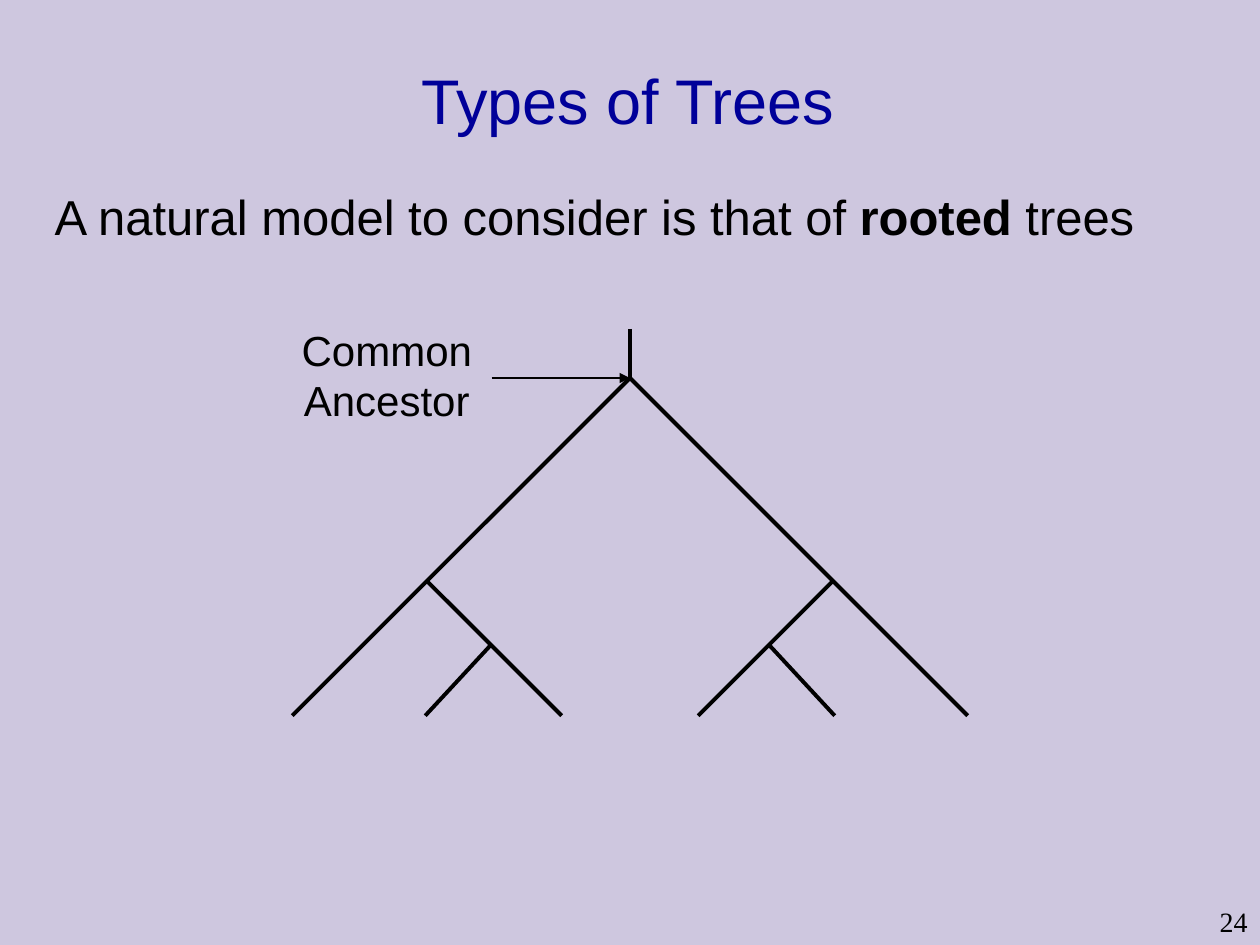
from lxml import etree
from pptx import Presentation
from pptx.dml.color import RGBColor
from pptx.enum import shapes, text
from pptx.oxml import ns
from pptx.util import Pt

BLACK, NAVY, LILAC = "000000", "000099", "CEC7DF"

TITLE = "Types of Trees"
BODY = [("A natural model to consider is that of ", False), ("rooted", True), (" trees", False)]
LABEL = ["Common", "Ancestor"]
PAGE = "24"

# Branches of one half: (distance from the axis, y) at each end
AXIS, ROOT_Y, LEAF_Y = 360, 216, 409
HALF_BRANCHES = [
    ((0, ROOT_Y), (193, LEAF_Y)),
    ((116, 332), (39, LEAF_Y)),
    ((79, 368), (117, LEAF_Y)),
]


def rgb(color):
    return RGBColor.from_string(color)


def place(sp, left, top, width, height):
    sp.left, sp.top, sp.width, sp.height = map(Pt, (left, top, width, height))


def add_run(p, words, size, color=BLACK, font="Arial", bold=False):
    r = p.add_run()
    r.text = words
    r.font.size, r.font.name, r.font.bold = Pt(size), font, bold
    r.font.color.rgb = rgb(color)


def add_box(s, box, lines, size, align, font="Arial", spacing=None):
    sp = s.shapes.add_textbox(*map(Pt, box))
    tf = sp.text_frame
    tf.word_wrap = False
    tf.vertical_anchor = text.MSO_ANCHOR.MIDDLE
    for i, line in enumerate(lines):
        p = tf.add_paragraph() if i else tf.paragraphs[0]
        p.alignment = align
        if spacing:
            p.line_spacing = Pt(spacing)
        add_run(p, line, size, font=font)


def add_line(s, start, end, width, arrow=False):
    c = s.shapes.add_connector(shapes.MSO_CONNECTOR.STRAIGHT, *map(Pt, start + end))
    c.line.width = Pt(width)
    c.line.color.rgb = rgb(BLACK)
    if arrow:
        etree.SubElement(c.line._get_or_add_ln(), ns.qn("a:tailEnd"), type="triangle")
    etree.SubElement(c._element.spPr, ns.qn("a:effectLst"))


def main():
    prs = Presentation()
    prs.slide_width, prs.slide_height = Pt(720), Pt(540)
    s = prs.slides.add_slide(prs.slide_layouts[1])
    s.background.fill.solid()
    s.background.fill.fore_color.rgb = rgb(LILAC)

    title, body = s.placeholders
    place(title, 27.5, 12, 662.5, 90)
    title.text_frame.vertical_anchor = text.MSO_ANCHOR.MIDDLE
    p = title.text_frame.paragraphs[0]
    p.alignment = text.PP_ALIGN.CENTER
    add_run(p, TITLE, 36, NAVY)

    place(body, 24, 103, 680, 402.5)
    p = body.text_frame.paragraphs[0]
    p.space_before = Pt(5.6)
    pPr = p._p.get_or_add_pPr()
    pPr.set("marL", str(Pt(22.5)))
    pPr.set("indent", str(Pt(-22.5)))
    etree.SubElement(pPr, ns.qn("a:buNone"))
    for words, bold in BODY:
        add_run(p, words, 28, bold=bold)

    add_line(s, (AXIS, 188), (AXIS, ROOT_Y), 2.25)
    for side in (-1, 1):
        for ends in HALF_BRANCHES:
            start, end = [(AXIS + side * dx, y) for dx, y in ends]
            add_line(s, start, end, 2.25)
    add_line(s, (281, ROOT_Y), (AXIS, ROOT_Y), 1.5, arrow=True)

    add_box(s, (165, 181.5, 112, 65), LABEL, 24, text.PP_ALIGN.CENTER, spacing=29)
    add_box(s, (687, 513.5, 33, 26.5), [PAGE], 16, text.PP_ALIGN.RIGHT, "Times New Roman")
    prs.save("out.pptx")


if __name__ == "__main__":
    main()
